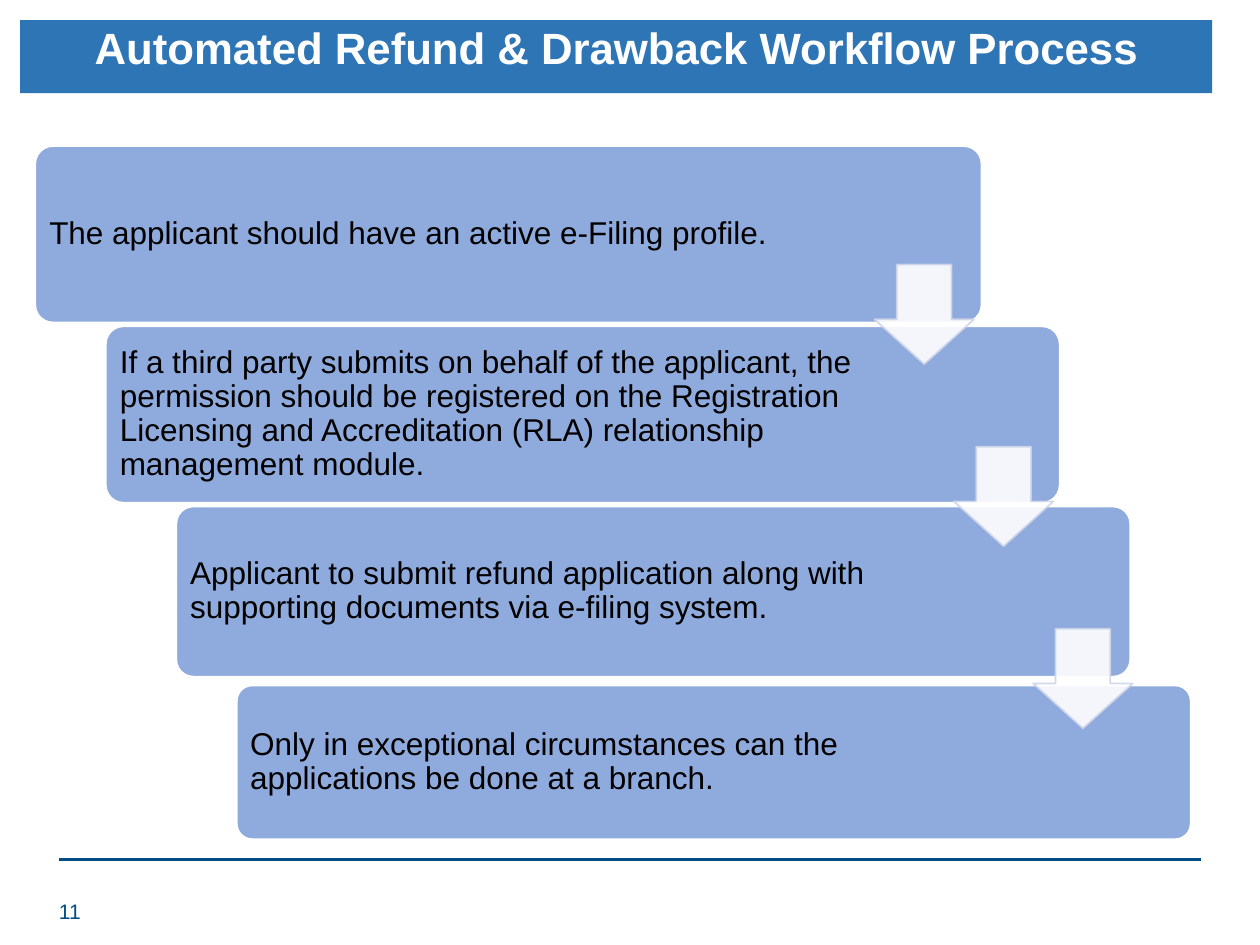
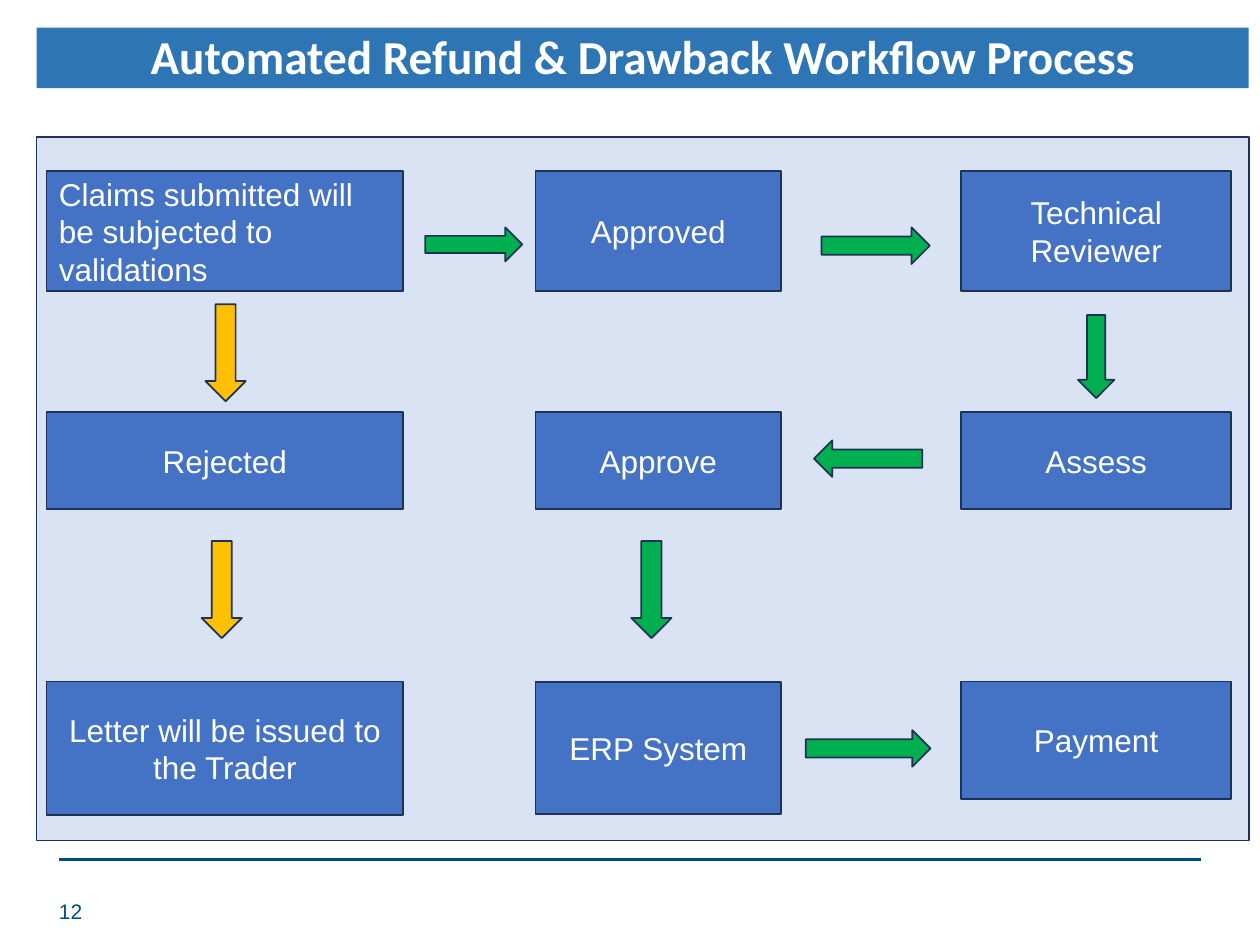
from lxml.etree import SubElement
from pptx import Presentation
from pptx.dml.color import RGBColor
from pptx.enum.shapes import MSO_CONNECTOR as CONN, MSO_SHAPE as SHAPE
from pptx.enum.text import MSO_ANCHOR as ANCHOR, MSO_AUTO_SIZE as AUTO, PP_ALIGN as ALIGN
from pptx.oxml.ns import qn
from pptx.util import Inches, Pt

C = {"band": "2E75B6", "rule": "004C85", "step": "8FAADC", "white": "FFFFFF",
     "pale": "CFD5EA", "black": "000000", "panel": "DAE3F3", "box": "4472C4",
     "edge": "1E3256", "green": "00B050", "amber": "FFC000"}
TITLE = "Automated Refund & Drawback Workflow Process"

STEPS_AT = (0.28, 1.16)
STEPS = [
    (0, 0, 7.51, 1.4, "The applicant should have an active e-Filing profile."),
    (0.56, 1.43, 7.57, 1.4, "If a third party submits on behalf of the applicant, the permission "
     "should be registered on the Registration Licensing and Accreditation (RLA) "
     "relationship management module."),
    (1.12, 2.86, 7.57, 1.35, "Applicant to submit refund application along with supporting "
     "documents via e-filing system."),
    (1.6, 4.28, 7.57, 1.22, "Only in exceptional circumstances can the applications be done "
     "at a branch."),
]

PANEL = (0.29, 1.09, 9.62, 5.58)
COLS = [(0.08, 2.83), (3.96, 1.95), (7.34, 2.14)]
ROWS = [0.27, 2.18, 4.32]
HEIGHTS = [(0.95, 0.95, 0.95), (0.77, 0.77, 0.77), (1.06, 1.05, 0.93)]
LABELS = [("Claims submitted will be subjected to validations", "Approved", "Technical Reviewer"),
          ("Rejected", "Approve", "Assess"),
          ("Letter will be issued to the Trader", "ERP System", "Payment")]
FLOW = [
    (3.47, 0.85, 0.77, 0.27, 0, "green"), (6.66, 0.86, 0.86, 0.29, 0, "green"),
    (8.41, 1.74, 0.66, 0.29, 90, "green"), (6.6, 2.55, 0.86, 0.29, 180, "green"),
    (4.88, 3.59, 0.77, 0.32, 90, "green"), (6.6, 4.85, 0.99, 0.29, 0, "green"),
    (1.5, 1.71, 0.77, 0.32, 90, "amber"), (1.47, 3.59, 0.77, 0.32, 90, "amber"),
]


def rgb(name):
    """Return the named colour."""
    return RGBColor.from_string(C[name])


def write(sp, text, size=18, color="white", font="Arial", bold=False, align=ALIGN.LEFT,
          anchor=ANCHOR.MIDDLE, spacing=None, insets=(0.1, 0.05, 0.1, 0.05)):
    """Put one formatted paragraph into a shape."""
    tf = sp.text_frame
    tf.word_wrap, tf.auto_size, tf.vertical_anchor = True, AUTO.NONE, anchor
    tf.margin_left, tf.margin_top, tf.margin_right, tf.margin_bottom = map(Inches, insets)
    p = tf.paragraphs[0]
    p.alignment, p.line_spacing = align, spacing
    r = p.add_run()
    r.text = text
    r.font.name, r.font.size, r.font.bold = font, Pt(size), bold
    r.font.color.rgb = rgb(color)


def add_block(s, kind, at, fill, line="edge", adj=()):
    """Add a flat preset shape."""
    sp = s.shapes.add_shape(kind, *map(Inches, at))
    sp.shadow.inherit = False
    sp.fill.solid()
    sp.fill.fore_color.rgb = rgb(fill)
    sp.line.color.rgb, sp.line.width = rgb(line), Pt(1)
    for i, value in enumerate(adj):
        sp.adjustments[i] = value
    return sp


def fade(sp, percent):
    """Set the opacity of a shape's fill and line."""
    for clr in sp.element.spPr.iter(qn("a:srgbClr")):
        SubElement(clr, qn("a:alpha"), val=str(percent * 1000))


def add_base(prs, number, title_at, font, size):
    """Add a slide with the title band, footer rule and number."""
    s = prs.slides.add_slide(prs.slide_layouts[5])
    title = s.shapes.title
    title.left, title.top, title.width, title.height = map(Inches, title_at)
    title.fill.solid()
    title.fill.fore_color.rgb = rgb("band")
    write(title, TITLE, size, font=font, bold=True, align=ALIGN.CENTER,
          anchor=ANCHOR.TOP, spacing=0.9)
    rule = s.shapes.add_connector(CONN.STRAIGHT, *map(Inches, (0.47, 6.82, 9.53, 6.82)))
    rule.line.color.rgb, rule.line.width = rgb("rule"), Pt(2)
    SubElement(rule.element.spPr, qn("a:effectLst"))
    tb = s.shapes.add_textbox(*map(Inches, (0.37, 7.03, 0.46, 0.4)))
    write(tb, str(number), 12, "rule")
    return s


def add_steps(s, left, top):
    """Draw the descending steps and the arrows between them."""
    for x, y, w, h, text in STEPS:
        sp = add_block(s, SHAPE.ROUNDED_RECTANGLE, (left + x, top + y, w, h),
                       "step", "white", (0.1,))
        write(sp, text, color="black", spacing=0.9, insets=(0.07, 0.07, 1.46, 0.07))
    for i in range(len(STEPS) - 1):
        at = (left + 6.66 + 0.63 * i, top + 0.94 + 1.445 * i, 0.79, 0.79)
        fade(add_block(s, SHAPE.DOWN_ARROW, at, "white", "pale", (0.55, 0.45)), 90)


def add_flow(s, left, top, width, height):
    """Draw the panel with its grid of stages and flow arrows."""
    add_block(s, SHAPE.RECTANGLE, (left, top, width, height), "panel")
    for row, (y, heights, labels) in enumerate(zip(ROWS, HEIGHTS, LABELS)):
        for col, ((x, w), h, label) in enumerate(zip(COLS, heights, labels)):
            sp = add_block(s, SHAPE.RECTANGLE, (left + x, top + y, w, h), "box")
            write(sp, label, align=ALIGN.CENTER if row or col else ALIGN.LEFT)
    for cx, cy, length, thick, turn, color in FLOW:
        at = (left + cx - length / 2, top + cy - thick / 2, length, thick)
        add_block(s, SHAPE.RIGHT_ARROW, at, color).rotation = turn


def main():
    """Build both slides and save the file."""
    prs = Presentation()
    prs.slide_width, prs.slide_height = Inches(10), Inches(7.5)
    add_steps(add_base(prs, 11, (0.16, 0.16, 9.46, 0.58), "Arial", 25), *STEPS_AT)
    add_flow(add_base(prs, 12, (0.29, 0.22, 9.62, 0.48), "Calibri", 27), *PANEL)
    prs.save("out.pptx")


if __name__ == "__main__":
    main()
